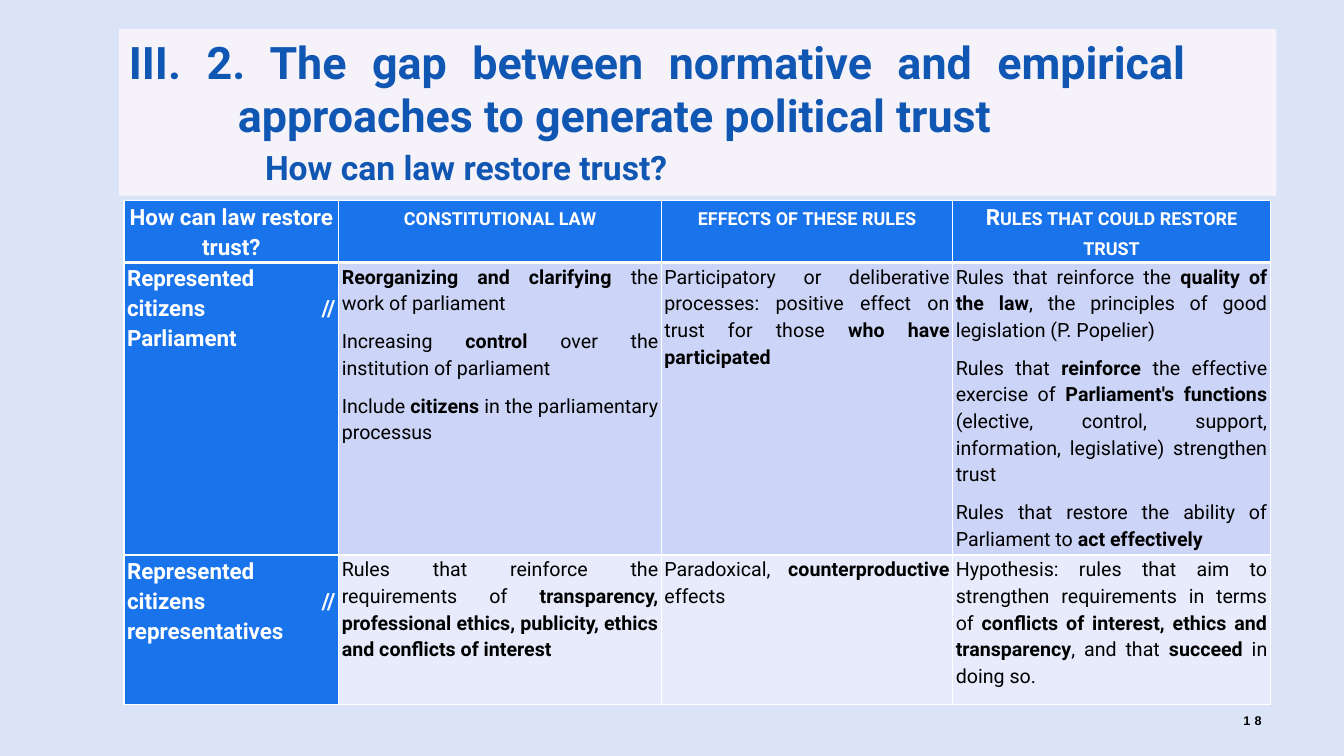
from lxml.etree import SubElement
from pptx import Presentation
from pptx.dml.color import RGBColor
from pptx.enum.shapes import MSO_SHAPE as Shape
from pptx.enum.text import MSO_ANCHOR as Anchor, PP_ALIGN as Align
from pptx.oxml.ns import qn
from pptx.util import Inches, Pt

COLORS = {
    "background": "DBE4F7", "banner": "F5F2F9", "title": "1056B3",
    "header": "1973EB", "upper": "CCD5F7", "lower": "E8EBFB",
    "white": "FFFFFF", "black": "000000",
}
TITLE = "III. 2. The gap between normative and empirical approaches to generate political trust"
SUBTITLE = "How can law restore trust?"
PAGE_NUMBER = "18"
HEADERS = ["How can law restore trust?", "constitutional law",
           "effects of these rules", "Rules that could restore trust"]
BODY = [
    ("upper", "Represented citizens // Parliament", [
        ["**Reorganizing and clarifying **the work of parliament",
         "Increasing **control** over the institution of parliament",
         "Include **citizens** in the parliamentary processus"],
        ["Participatory or deliberative processes: positive effect on trust "
         "for those **who have participated**"],
        ["Rules that reinforce the **quality of the law**, the principles of "
         "good legislation (P. Popelier)",
         "Rules that **reinforce** the effective exercise of **Parliament's functions **"
         "(elective, control, support, information, legislative) strengthen trust",
         "Rules that restore the ability of Parliament to **act effectively**"],
    ]),
    ("lower", "Represented citizens // representatives", [
        ["Rules that reinforce the requirements of **transparency, professional "
         "ethics, publicity, ethics and conflicts of interest**"],
        ["Paradoxical, **counterproductive** effects"],
        ["Hypothesis: rules that aim to strengthen requirements in terms of "
         "**conflicts of interest, ethics and transparency**, and that **succeed** "
         "in doing so."],
    ]),
]
COLUMN_WIDTHS = [2.13, 3.2, 2.89, 3.15]
ROW_HEIGHTS = [0.47, 2.68, 1.48]
TABLE_LEFT, TABLE_TOP = 1.23, 1.99


def color(name):
    return RGBColor.from_string(COLORS[name])


def add_run(paragraph, text, size, color_name, bold=True, font="Roboto"):
    run = paragraph.add_run()
    run.text = text
    run.font.name = font
    run.font.size = Pt(size)
    run.font.bold = bold
    run.font.color.rgb = color(color_name)
    return run


def add_title(slide):
    banner = slide.shapes.add_shape(
        Shape.RECTANGLE, Inches(1.18), Inches(0.29), Inches(11.48), Inches(1.65))
    banner.shadow.inherit = False
    banner.fill.solid()
    banner.fill.fore_color.rgb = color("banner")
    banner.line.fill.background()
    frame = banner.text_frame
    frame.word_wrap = True
    frame.vertical_anchor = Anchor.TOP
    frame.margin_right = Inches(0.89)
    lines = [(TITLE, 32, 1.08, -1.08, 0), (SUBTITLE, 24, 1.35, 0, 4)]
    for index, (text, size, left, indent, before) in enumerate(lines):
        paragraph = frame.add_paragraph() if index else frame.paragraphs[0]
        paragraph.alignment = Align.JUSTIFY
        paragraph.space_before = Pt(before)
        properties = paragraph._p.get_or_add_pPr()
        properties.set("marL", str(Inches(left)))
        properties.set("indent", str(Inches(indent)))
        add_run(paragraph, text, size, "title")


def add_borders(cell, top, bottom):
    properties = cell._tc.get_or_add_tcPr()
    for side, width in (("L", 1), ("R", 1), ("T", top), ("B", bottom)):
        line = SubElement(properties, qn("a:ln" + side), w=str(Pt(width)))
        fill = SubElement(line, qn("a:solidFill"))
        SubElement(fill, qn("a:srgbClr"), val=COLORS["white"])


def fill_cell(cell, row, paragraphs, fill, size, text_color, alignment, small_caps=False):
    add_borders(cell, 3 if row == 1 else 1, 3 if row == 0 else 1)
    cell.fill.solid()
    cell.fill.fore_color.rgb = color(fill)
    cell.margin_left = cell.margin_right = Inches(0.03)
    cell.margin_top = cell.margin_bottom = 0
    frame = cell.text_frame
    for index, text in enumerate(paragraphs):
        paragraph = frame.add_paragraph() if index else frame.paragraphs[0]
        paragraph.alignment = alignment
        paragraph.line_spacing = 1.15
        paragraph.space_after = Pt(8)
        for part, piece in enumerate(text.split("**")):
            if piece:
                bold = text_color == "white" or part % 2 == 1
                run = add_run(paragraph, piece, size, text_color, bold)
                if small_caps:
                    run.font._element.set("cap", "small")


def add_trust_table(slide):
    table = slide.shapes.add_table(
        len(ROW_HEIGHTS), len(COLUMN_WIDTHS), Inches(TABLE_LEFT), Inches(TABLE_TOP),
        Inches(sum(COLUMN_WIDTHS)), Inches(sum(ROW_HEIGHTS))).table
    for column, width in zip(table.columns, COLUMN_WIDTHS):
        column.width = Inches(width)
    for row, height in zip(table.rows, ROW_HEIGHTS):
        row.height = Inches(height)
    for column, header in enumerate(HEADERS):
        fill_cell(table.cell(0, column), 0, [header], "header", 16, "white",
                  Align.CENTER, column > 0)
    for row, (fill, label, cells) in enumerate(BODY, 1):
        fill_cell(table.cell(row, 0), row, [label], "header", 16, "white", Align.JUSTIFY)
        for column, paragraphs in enumerate(cells, 1):
            fill_cell(table.cell(row, column), row, paragraphs, fill, 14, "black",
                      Align.JUSTIFY)


def add_page_number(slide):
    box = slide.shapes.add_textbox(Inches(11.82), Inches(6.95), Inches(0.79), Inches(0.4))
    frame = box.text_frame
    frame.word_wrap = True
    frame.vertical_anchor = Anchor.MIDDLE
    paragraph = frame.paragraphs[0]
    paragraph.alignment = Align.RIGHT
    run = add_run(paragraph, PAGE_NUMBER, 9, "black", font="Arial")
    run.font._element.set("spc", "300")


def main():
    presentation = Presentation()
    presentation.slide_width = Inches(13.33)
    presentation.slide_height = Inches(7.5)
    slide = presentation.slides.add_slide(presentation.slide_layouts[6])
    slide.background.fill.solid()
    slide.background.fill.fore_color.rgb = color("background")
    add_title(slide)
    add_page_number(slide)
    add_trust_table(slide)
    presentation.save("out.pptx")


if __name__ == "__main__":
    main()
